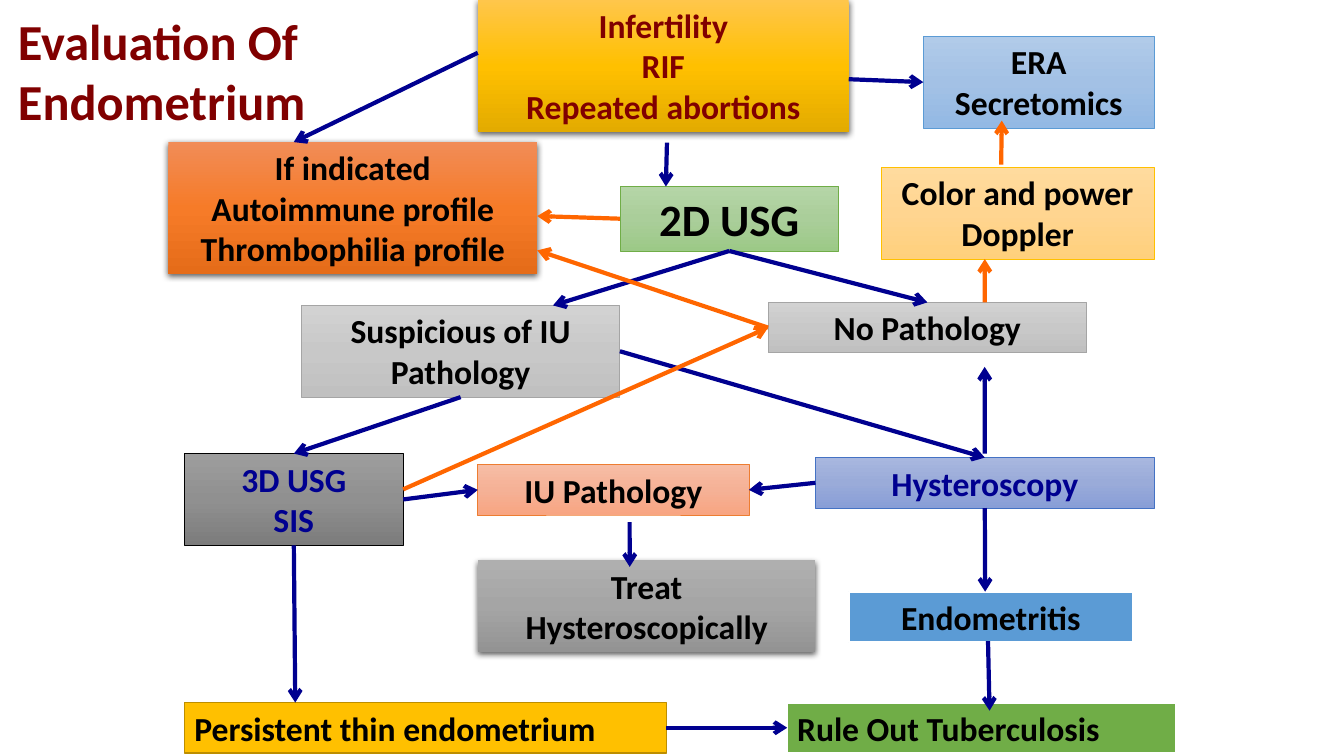
from copy import deepcopy

from pptx import Presentation
from pptx.dml.color import RGBColor
from pptx.enum.shapes import MSO_CONNECTOR as Connector, MSO_SHAPE as Preset
from pptx.enum.text import MSO_ANCHOR as Anchor, MSO_AUTO_SIZE as AutoSize, PP_ALIGN as Align
from pptx.oxml import parse_xml
from pptx.oxml.ns import nsdecls, qn
from pptx.oxml.xmlchemy import OxmlElement
from pptx.util import Inches, Pt

COLUMNS, ROWS = 80, 45
ONE_LINE, TWO_LINES, THREE_LINES = 3, 5.46, 7.86  # box heights in rows

BLACK = RGBColor(0x00, 0x00, 0x00)
WHITE = RGBColor(0xFF, 0xFF, 0xFF)
MAROON = RGBColor(0x80, 0x00, 0x00)
NAVY = RGBColor(0x00, 0x00, 0x90)
ORANGE = RGBColor(0xFF, 0x66, 0x00)
GOLD = RGBColor(0xFF, 0xC0, 0x00)
DARK_GOLD = RGBColor(0xBD, 0x8E, 0x00)
GREEN = RGBColor(0x70, 0xAD, 0x47)
BLUE = RGBColor(0x5B, 0x9B, 0xD5)
INDIGO = RGBColor(0x44, 0x72, 0xC4)
RUST = RGBColor(0xED, 0x7D, 0x31)
SILVER = RGBColor(0xA5, 0xA5, 0xA5)

GOLD_SHADES = (RGBColor(0xFF, 0xC6, 0x4B), GOLD, RGBColor(0xE3, 0xAB, 0x00))
GREEN_SHADES = (RGBColor(0xB5, 0xD5, 0xA7), RGBColor(0xAA, 0xCE, 0x9A), RGBColor(0x9C, 0xC9, 0x87))
SILVER_SHADES = (RGBColor(0xD2, 0xD2, 0xD2), RGBColor(0xC8, 0xC8, 0xC8), RGBColor(0xC0, 0xC0, 0xC0))
CHARCOAL_SHADES = (RGBColor(0x9D, 0x9D, 0x9D), RGBColor(0x90, 0x90, 0x90), RGBColor(0x7C, 0x7C, 0x7C))
INDIGO_SHADES = (RGBColor(0xA8, 0xB7, 0xDF), RGBColor(0x9A, 0xAB, 0xD9), RGBColor(0x88, 0x9E, 0xD7))
PEACH_SHADES = (RGBColor(0xF7, 0xBD, 0xA5), RGBColor(0xF5, 0xB1, 0x96), RGBColor(0xF8, 0xA5, 0x82))
GREY_SHADES = (RGBColor(0xAF, 0xAF, 0xAF), SILVER, RGBColor(0x93, 0x93, 0x93))
CREAM_SHADES = (RGBColor(0xFF, 0xDB, 0x9E), RGBColor(0xFF, 0xD5, 0x90), RGBColor(0xFF, 0xD0, 0x7C))
SKY_SHADES = (RGBColor(0xB1, 0xCB, 0xE9), RGBColor(0xA3, 0xC1, 0xE5), RGBColor(0x93, 0xB9, 0xE4))
ORANGE_SHADES = (RGBColor(0xF1, 0x8C, 0x57), RGBColor(0xF6, 0x7B, 0x28), RGBColor(0xE5, 0x6C, 0x19))


class FlowSlide:
    font_name = "Calibri"

    def __init__(self, presentation):
        self.slide = presentation.slides.add_slide(presentation.slide_layouts[6])
        self.column = presentation.slide_width / COLUMNS
        self.row = presentation.slide_height / ROWS

    def place(self, left, top, width, height):
        """Turn columns and rows into slide lengths."""
        return (round(left * self.column), round(top * self.row),
                round(width * self.column), round(height * self.row))

    def add_text(self, shape, lines, color, size, align):
        frame = shape.text_frame
        frame.word_wrap = True
        frame.auto_size = AutoSize.SHAPE_TO_FIT_TEXT
        frame.vertical_anchor = Anchor.TOP
        for index, line in enumerate(lines):
            paragraph = frame.paragraphs[0] if index == 0 else frame.add_paragraph()
            paragraph.alignment = align
            run = paragraph.add_run()
            run.text = line
            run.font.name = self.font_name
            run.font.size = Pt(size)
            run.font.bold = True
            run.font.color.rgb = color

    def title(self, grid, text):
        box = self.slide.shapes.add_textbox(*self.place(*grid))
        self.add_text(box, [text], MAROON, 36, Align.LEFT)

    def shade(self, shape, shades):
        """Fill from top to bottom through three evenly spaced colours."""
        fill = shape.fill
        fill.gradient()
        fill.gradient_angle = 270
        stop_list = shape._element.spPr.find(qn("a:gradFill")).find(qn("a:gsLst"))
        stop_list.insert(1, deepcopy(stop_list[0]))
        for index, (stop, shade) in enumerate(zip(fill.gradient_stops, shades)):
            stop.position = index / 2
            stop.color.rgb = shade

    def drop_shadow(self, shape):
        shape._element.spPr.find(qn("a:effectLst")).append(parse_xml(
            f'<a:outerShdw {nsdecls("a")} blurRad="{Pt(4.5)}" dist="{Pt(1.5)}" dir="5400000" '
            'algn="ctr" rotWithShape="0"><a:srgbClr val="000000"><a:alpha val="63000"/>'
            '</a:srgbClr></a:outerShdw>'))

    def box(self, grid, lines, fill, outline=None, weight=0.5, color=BLACK, size=24,
            align=Align.CENTER):
        """Add a box; one without an outline casts a shadow instead."""
        shape = self.slide.shapes.add_shape(Preset.RECTANGLE, *self.place(*grid))
        shape.shadow.inherit = False
        if isinstance(fill, RGBColor):
            shape.fill.solid()
            shape.fill.fore_color.rgb = fill
        else:
            self.shade(shape, fill)
        if outline is None:
            shape.line.fill.background()
            self.drop_shadow(shape)
        else:
            shape.line.color.rgb = outline
            shape.line.width = Pt(weight)
        self.add_text(shape, lines, color, size, align)
        return shape

    def arrow(self, source, start, target, end, color=NAVY):
        """Join two boxes; start and end are shares of each box's width and height."""
        points = [round(length) for shape, (across, down) in ((source, start), (target, end))
                  for length in (shape.left + across * shape.width,
                                 shape.top + down * shape.height)]
        connector = self.slide.shapes.add_connector(Connector.STRAIGHT, *points)
        connector.line.color.rgb = color
        connector.line.width = Pt(3)
        head = OxmlElement("a:tailEnd")
        head.set("type", "arrow")
        properties = connector._element.spPr
        properties.find(qn("a:ln")).append(head)
        properties.append(OxmlElement("a:effectLst"))


def build(flow):
    infertility = flow.box((28.44, 0, 22.08, THREE_LINES),
                           ["Infertility", "RIF", "Repeated abortions"], GOLD_SHADES, color=MAROON)
    usg_2d = flow.box((36.9, 11.1, 13.02, 3.84), ["2D USG"], GREEN_SHADES, GREEN, size=32)
    suspicious = flow.box((17.94, 18.18, 18.96, TWO_LINES), ["Suspicious of IU Pathology"],
                          SILVER_SHADES, SILVER)
    usg_3d = flow.box((10.98, 27, 13.02, TWO_LINES), ["3D USG", "SIS"],
                      CHARCOAL_SHADES, BLACK, color=NAVY)
    hysteroscopy = flow.box((48.54, 27.24, 20.16, ONE_LINE), ["Hysteroscopy"],
                            INDIGO_SHADES, INDIGO, color=NAVY)
    iu_pathology = flow.box((28.44, 27.66, 16.14, ONE_LINE), ["IU Pathology"], PEACH_SHADES, RUST)
    treat = flow.box((28.44, 33.36, 20.1, TWO_LINES), ["Treat Hysteroscopically"], GREY_SHADES)
    no_pathology = flow.box((45.72, 18, 18.96, ONE_LINE), ["No Pathology"], SILVER_SHADES, SILVER)
    doppler = flow.box((52.44, 9.96, 16.26, TWO_LINES), ["Color and power Doppler"],
                       CREAM_SHADES, GOLD)
    era = flow.box((54.96, 2.16, 13.74, TWO_LINES), ["ERA", "Secretomics"], SKY_SHADES, BLUE)
    profiles = flow.box((10.02, 8.46, 21.96, THREE_LINES),
                        ["If indicated", "Autoimmune profile", "Thrombophilia profile"],
                        ORANGE_SHADES)
    endometritis = flow.box((50.52, 35.22, 16.92, ONE_LINE), ["Endometritis"], BLUE, WHITE, 1.5)
    tuberculosis = flow.box((46.86, 41.82, 23.16, ONE_LINE), ["Rule Out Tuberculosis"],
                            GREEN, WHITE, 1.5, align=Align.LEFT)
    thin = flow.box((10.98, 41.82, 28.68, ONE_LINE), ["Persistent thin endometrium"],
                    GOLD, DARK_GOLD, 1, align=Align.LEFT)

    top, bottom, left, right = (0.5, 0), (0.5, 1), (0, 0.5), (1, 0.5)
    for link in (
        (infertility, (0.51, 1.08), usg_2d, (0.21, 0)),
        (usg_2d, bottom, suspicious, (0.79, 0)),
        (usg_2d, bottom, no_pathology, top),
        (suspicious, right, hysteroscopy, top),
        (suspicious, bottom, usg_3d, top),
        (usg_3d, right, iu_pathology, left),
        (hysteroscopy, left, iu_pathology, right),
        (iu_pathology, (0.56, 1.14), treat, (0.45, 0.07)),
        (hysteroscopy, (0.5, -0.08), no_pathology, (0.68, 1.28)),
        (no_pathology, (0.68, 0), doppler, (0.38, 1), ORANGE),
        (doppler, (0.44, -0.03), era, (0.34, 0.92), ORANGE),
        (infertility, (1, 0.6), era, left),
        (infertility, (0, 0.4), profiles, (0.34, 0)),
        (usg_2d, left, profiles, (1, 0.56), ORANGE),
        (usg_3d, (1, 0.39), no_pathology, left, ORANGE),
        (no_pathology, left, profiles, (1, 0.82), ORANGE),
        (hysteroscopy, bottom, endometritis, (0.48, 0)),
        (endometritis, (0.49, 0.98), tuberculosis, (0.52, 0.16)),
        (thin, right, tuberculosis, left),
        (usg_3d, bottom, thin, (0.23, 0)),
    ):
        flow.arrow(*link)
    flow.title((0.48, 0.3, 24.06, THREE_LINES), "Evaluation Of Endometrium")


def main():
    presentation = Presentation()
    presentation.slide_width = Inches(13.33)
    presentation.slide_height = Inches(7.5)
    build(FlowSlide(presentation))
    presentation.save("out.pptx")


if __name__ == "__main__":
    main()
